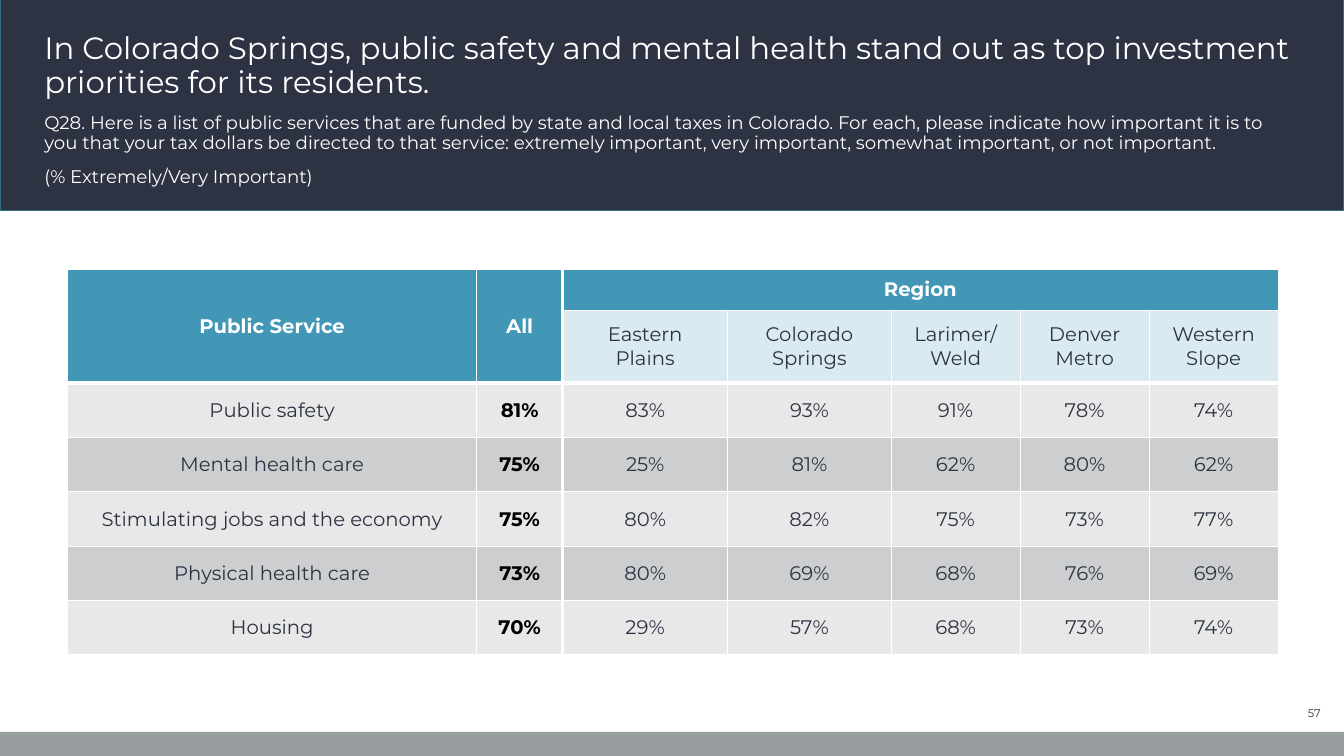
from dataclasses import dataclass
from typing import Any

from lxml.etree import SubElement
from pptx import Presentation
from pptx.dml.color import RGBColor
from pptx.enum.shapes import MSO_SHAPE
from pptx.enum.text import MSO_ANCHOR, MSO_AUTO_SIZE, PP_ALIGN
from pptx.oxml.ns import qn
from pptx.util import Inches, Pt

SLIDE_WIDTH, SLIDE_HEIGHT = Inches(13.33), Inches(7.5)
FONT = "Montserrat"
NAVY, WHITE, BLACK, TEAL, PALE = "2D3342", "FFFFFF", "000000", "4397B6", "D9EAF1"
STRIPES = ("E8E8E9", "CDCECF")
COLUMN_SHARES = (30.45, 6.38, 12.3, 12.15, 9.6, 9.6, 9.6)
ROW_SHARES = (5.47, 9.6) + (7.2,) * 5
HEADER_ROWS = 2
FIRST_REGION = 2

TITLE = ("In Colorado Springs, public safety and mental health stand out as top "
         "investment priorities for its residents.")
QUESTION = ("Q28. Here is a list of public services that are funded by state and local "
            "taxes in Colorado. For each, please indicate how important it is to you that "
            "your tax dollars be directed to that service: extremely important, very "
            "important, somewhat important, or not important.")
MEASURE = "(% Extremely/Very Important)"
TABLE_ROWS = (
    ("Public Service", "All", "Region", "", "", "", ""),
    ("", "", "Eastern\nPlains", "Colorado\nSprings", "Larimer/\vWeld",
     "Denver\nMetro", "Western\nSlope"),
    ("Public safety", "81%", "83%", "93%", "91%", "78%", "74%"),
    ("Mental health care", "75%", "25%", "81%", "62%", "80%", "62%"),
    ("Stimulating jobs and the economy", "75%", "80%", "82%", "75%", "73%", "77%"),
    ("Physical health care", "73%", "80%", "69%", "68%", "76%", "69%"),
    ("Housing", "70%", "29%", "57%", "68%", "73%", "74%"),
)


@dataclass(frozen=True)
class Area:
    """A rectangle in percent of the slide's width and height."""
    left: float
    top: float
    width: float
    height: float

    def lengths(self) -> tuple[int, int, int, int]:
        """Return left, top, width and height as slide lengths."""
        return across(self.left), down(self.top), across(self.width), down(self.height)


@dataclass(frozen=True)
class Band:
    """A full-width coloured band."""
    area: Area
    fill: str
    line: str | None = None


@dataclass(frozen=True)
class CellStyle:
    """The look of one table cell, with its margins in inches."""
    fill: str
    color: str
    bold: bool
    side: float
    end: float


BANDS = (
    Band(Area(0, -0.4, 100, 28.27), NAVY, "327087"),
    Band(Area(0, 96.8, 100, 3.2), "989DA0"),
)
TITLE_AREA = Area(2.55, 0.93, 94.8, 12.93)
QUESTION_AREA = Area(2.55, 14.4, 94.8, 12.27)
NUMBER_AREA = Area(93.15, 92.67, 5.85, 3.2)
TABLE_AREA = Area(5.03, 35.6, sum(COLUMN_SHARES), sum(ROW_SHARES))


def across(share: float) -> int:
    """Turn a percentage of the slide's width into a length."""
    return round(SLIDE_WIDTH * share / 100)


def down(share: float) -> int:
    """Turn a percentage of the slide's height into a length."""
    return round(SLIDE_HEIGHT * share / 100)


def color(value: str) -> RGBColor:
    """Turn a hex string into a colour."""
    return RGBColor.from_string(value)


def assign(target: Any, values: dict[str, Any]) -> None:
    """Set every attribute named in the values."""
    for name, value in values.items():
        setattr(target, name, value)


def set_font(paragraph: Any, size: float, ink: str, bold: bool = False) -> None:
    """Format the text of a paragraph."""
    for run in paragraph.runs:
        assign(run.font, {"name": FONT, "size": Pt(size), "bold": bold})
        run.font.color.rgb = color(ink)


def place(shape: Any, area: Area) -> None:
    """Move a shape to an area."""
    assign(shape, dict(zip(("left", "top", "width", "height"), area.lengths())))


def draw_band(slide: Any, band: Band) -> None:
    """Draw a band behind the placeholders."""
    shape = slide.shapes.add_shape(MSO_SHAPE.RECTANGLE, *band.area.lengths())
    shape.shadow.inherit = False
    shape.fill.solid()
    shape.fill.fore_color.rgb = color(band.fill)
    if band.line:
        shape.line.color.rgb = color(band.line)
        shape.line.width = Pt(1)
    else:
        shape.line.fill.background()
    shape.element.getparent().insert(2, shape.element)


def fill_placeholder(shape: Any, area: Area, texts: tuple[str, ...], size: float,
                     anchor: MSO_ANCHOR) -> None:
    """Write unbulleted white paragraphs into a placeholder."""
    place(shape, area)
    frame = shape.text_frame
    frame.text = "\n".join(texts)
    assign(frame, {"word_wrap": True, "auto_size": MSO_AUTO_SIZE.NONE,
                   "vertical_anchor": anchor})
    for index, paragraph in enumerate(frame.paragraphs):
        properties = paragraph._p.get_or_add_pPr()
        properties.set("marL", "0")
        properties.set("indent", "0")
        SubElement(properties, qn("a:buNone"))
        assign(paragraph, {"alignment": PP_ALIGN.LEFT, "line_spacing": 0.9,
                           "space_before": Pt(10 if index else 0)})
        set_font(paragraph, size, WHITE)


def draw_number(slide: Any, number: str) -> None:
    """Write the page number at the lower right."""
    frame = slide.shapes.add_textbox(*NUMBER_AREA.lengths()).text_frame
    frame.text = number
    assign(frame, {"word_wrap": True, "vertical_anchor": MSO_ANCHOR.MIDDLE})
    frame.paragraphs[0].alignment = PP_ALIGN.RIGHT
    set_font(frame.paragraphs[0], 8, NAVY)


def cell_style(row: int, column: int) -> CellStyle:
    """Choose the style of a cell from its place in the table."""
    if row < HEADER_ROWS and column < FIRST_REGION:
        return CellStyle(TEAL, WHITE, True, 0, 0.1)
    if row == 0:
        return CellStyle(TEAL, WHITE, True, 0.1, 0.05)
    if row < HEADER_ROWS:
        return CellStyle(PALE, NAVY, False, 0.01, 0.02)
    total = column == FIRST_REGION - 1
    return CellStyle(STRIPES[row % 2], BLACK if total else NAVY, total, 0.01, 0.01)


def draw_borders(cell: Any, row: int, column: int) -> None:
    """Draw white cell borders, heavy beside the totals and below the header."""
    heavy = {
        "a:lnL": column == FIRST_REGION,
        "a:lnR": column == FIRST_REGION - 1,
        "a:lnT": row == HEADER_ROWS,
        "a:lnB": row == HEADER_ROWS - 1 or (row == 0 and column < FIRST_REGION),
    }
    properties = cell._tc.get_or_add_tcPr()
    for tag, is_heavy in heavy.items():
        line = SubElement(properties, qn(tag), w=str(Pt(3 if is_heavy else 1)))
        SubElement(SubElement(line, qn("a:solidFill")), qn("a:srgbClr"), val=WHITE)


def draw_table(slide: Any) -> None:
    """Draw the table of services by region."""
    table = slide.shapes.add_table(
        len(ROW_SHARES), len(COLUMN_SHARES), *TABLE_AREA.lengths()).table
    assign(table, {"first_row": False, "horz_banding": False})
    for column, share in zip(table.columns, COLUMN_SHARES):
        column.width = across(share)
    for row, share in zip(table.rows, ROW_SHARES):
        row.height = down(share)
    for row_index, texts in enumerate(TABLE_ROWS):
        for column_index, text in enumerate(texts):
            cell = table.cell(row_index, column_index)
            style = cell_style(row_index, column_index)
            draw_borders(cell, row_index, column_index)
            cell.fill.solid()
            cell.fill.fore_color.rgb = color(style.fill)
            side, end = Inches(style.side), Inches(style.end)
            assign(cell, {"text": text, "vertical_anchor": MSO_ANCHOR.MIDDLE,
                          "margin_left": side, "margin_right": side,
                          "margin_top": end, "margin_bottom": end})
            for paragraph in cell.text_frame.paragraphs:
                paragraph.alignment = PP_ALIGN.CENTER
                set_font(paragraph, 14, style.color, style.bold)
    for column_index in range(FIRST_REGION):
        table.cell(0, column_index).merge(table.cell(HEADER_ROWS - 1, column_index))
    table.cell(0, FIRST_REGION).merge(table.cell(0, len(COLUMN_SHARES) - 1))


def main() -> None:
    """Build and save the slide."""
    presentation = Presentation()
    assign(presentation, {"slide_width": SLIDE_WIDTH, "slide_height": SLIDE_HEIGHT})
    slide = presentation.slides.add_slide(presentation.slide_layouts[1])
    for band in BANDS:
        draw_band(slide, band)
    fill_placeholder(slide.shapes.title, TITLE_AREA, (TITLE,), 22, MSO_ANCHOR.BOTTOM)
    fill_placeholder(slide.placeholders[1], QUESTION_AREA, (QUESTION, MEASURE), 13,
                     MSO_ANCHOR.TOP)
    draw_table(slide)
    draw_number(slide, "57")
    presentation.save("out.pptx")


if __name__ == "__main__":
    main()
